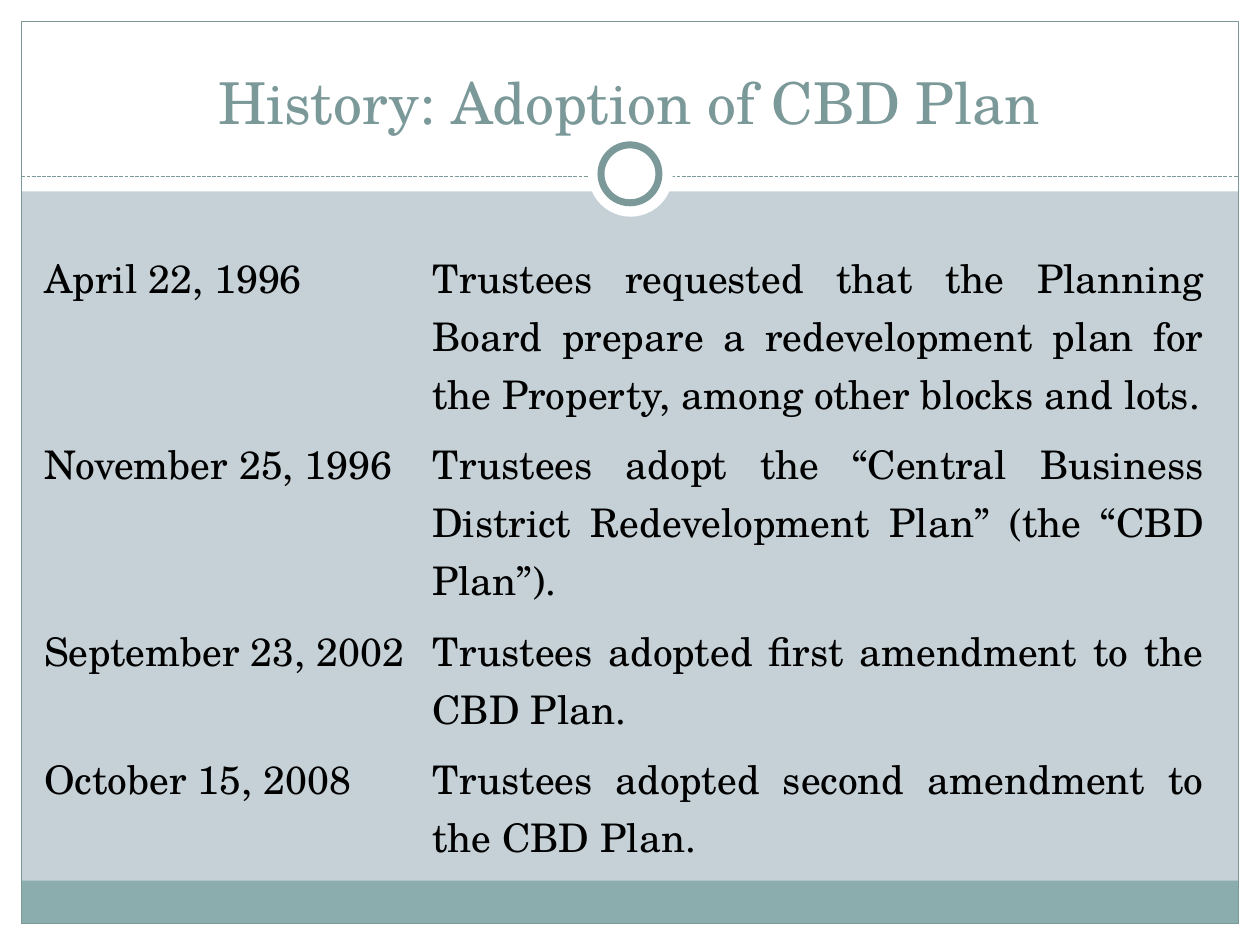
from lxml import etree
from pptx import Presentation
from pptx.dml.color import RGBColor
from pptx.enum.dml import MSO_LINE
from pptx.enum.shapes import MSO_CONNECTOR, MSO_SHAPE as SHAPE
from pptx.enum.text import MSO_ANCHOR as ANCHOR, MSO_AUTO_SIZE, PP_ALIGN as ALIGN
from pptx.oxml.ns import qn
from pptx.util import Inches, Pt

FONT = "TeX Gyre Schola"
WHITE = RGBColor(0xFF, 0xFF, 0xFF)
BLACK = RGBColor(0x00, 0x00, 0x00)
BACKGROUND = RGBColor(0xC5, 0xD1, 0xD7)
BAND = RGBColor(0x8C, 0xAD, 0xAE)
ACCENT = RGBColor(0x7C, 0x99, 0x9A)

WIDTH, HEIGHT = 10, 7.5
EDGE = 0.17
RULE_Y = 1.4
LINE_PITCH = 0.46
CELL_PADDING = 0.1
NO_STYLE_NO_GRID = "{2D5ABB26-0587-4C30-8999-92F81FD0307C}"

# Date, event, number of lines the event takes
EVENTS = [
    ("April 22, 1996",
     "Trustees requested that the Planning Board prepare a redevelopment plan "
     "for the Property, among other blocks and lots.", 3),
    ("November 25, 1996",
     "Trustees adopt the “Central Business District Redevelopment Plan” "
     "(the “CBD Plan”).", 3),
    ("September 23, 2002",
     "Trustees adopted first amendment to the CBD Plan.", 2),
    ("October 15, 2008",
     "Trustees adopted second amendment to the CBD Plan.", 2),
]


def add_box(slide, kind, box, fill=None, line=None, weight=0.75):
    sp = slide.shapes.add_shape(kind, *map(Inches, box))
    sp.shadow.inherit = False
    if fill is None:
        sp.fill.background()
    else:
        sp.fill.solid()
        sp.fill.fore_color.rgb = fill
    if line is None:
        sp.line.fill.background()
    else:
        sp.line.color.rgb = line
        sp.line.width = Pt(weight)


def add_dashed_rule(slide, left, right, y):
    rule = slide.shapes.add_connector(
        MSO_CONNECTOR.STRAIGHT, *map(Inches, (left, y, right, y)))
    rule.line.color.rgb = ACCENT
    rule.line.width = Pt(0.75)
    rule.line.dash_style = MSO_LINE.SQUARE_DOT
    etree.SubElement(rule._element.spPr, qn("a:effectLst"))


def add_run(p, text, size, color):
    r = p.add_run()
    r.text = text
    r.font.name = FONT
    r.font.size = Pt(size)
    r.font.color.rgb = color


def add_frame(slide):
    # White margins and header
    for box in [(0, HEIGHT - EDGE, WIDTH, EDGE), (0, 0, WIDTH, 1.52),
                (0, 0, EDGE, HEIGHT), (WIDTH - EDGE, 0, EDGE, HEIGHT)]:
        add_box(slide, SHAPE.RECTANGLE, box, WHITE)
    # Footer band and outline
    inner = WIDTH - 2 * EDGE
    add_box(slide, SHAPE.RECTANGLE, (EDGE, 6.99, inner, 0.34), BAND)
    add_box(slide, SHAPE.RECTANGLE, (EDGE, EDGE, inner, HEIGHT - 2 * EDGE),
            line=ACCENT)
    # Rule with a ring at its centre
    add_dashed_rule(slide, EDGE, WIDTH - EDGE, RULE_Y)
    add_box(slide, SHAPE.OVAL, (4.67, 1.05, 0.67, 0.67), WHITE)
    add_box(slide, SHAPE.OVAL, (4.77, 1.15, 0.46, 0.46), WHITE, ACCENT, 4)


def set_title(slide, text):
    title = slide.shapes.title
    title.left, title.top, title.width, title.height = map(
        Inches, (0.33, 0.25, 9.33, 0.83))
    tf = title.text_frame
    tf.word_wrap = True
    tf.auto_size = MSO_AUTO_SIZE.NONE
    tf.vertical_anchor = ANCHOR.BOTTOM
    tf.margin_bottom = 0
    p = tf.paragraphs[0]
    p.alignment = ALIGN.CENTER
    add_run(p, text, 33, ACCENT)
    # Bring the title in front of the white header
    slide.shapes._spTree.append(title._element)


def fill_cell(cell, text):
    cell.fill.background()
    cell.vertical_anchor = ANCHOR.TOP
    p = cell.text_frame.paragraphs[0]
    p.alignment = ALIGN.JUSTIFY
    p.line_spacing = Pt(LINE_PITCH * 72)
    add_run(p, text, 22.5, BLACK)


def add_timeline(slide, events):
    heights = [lines * LINE_PITCH + CELL_PADDING for _, _, lines in events]
    frame = slide.shapes.add_table(
        len(events), 2, *map(Inches, (0.25, 1.92, 9.42, sum(heights))))
    table = frame.table
    table.first_row = table.horz_banding = False
    table._tbl.tblPr.find(qn("a:tableStyleId")).text = NO_STYLE_NO_GRID
    for column, width in zip(table.columns, (3.08, 6.33)):
        column.width = Inches(width)
    for row, height, (date, event, _) in zip(table.rows, heights, events):
        row.height = Inches(height)
        fill_cell(row.cells[0], date)
        fill_cell(row.cells[1], event)


def main():
    prs = Presentation()
    prs.slide_width, prs.slide_height = Inches(WIDTH), Inches(HEIGHT)
    slide = prs.slides.add_slide(prs.slide_layouts[5])
    slide.background.fill.solid()
    slide.background.fill.fore_color.rgb = BACKGROUND
    add_frame(slide)
    set_title(slide, "History: Adoption of CBD Plan")
    add_timeline(slide, EVENTS)
    prs.save("out.pptx")


if __name__ == "__main__":
    main()
